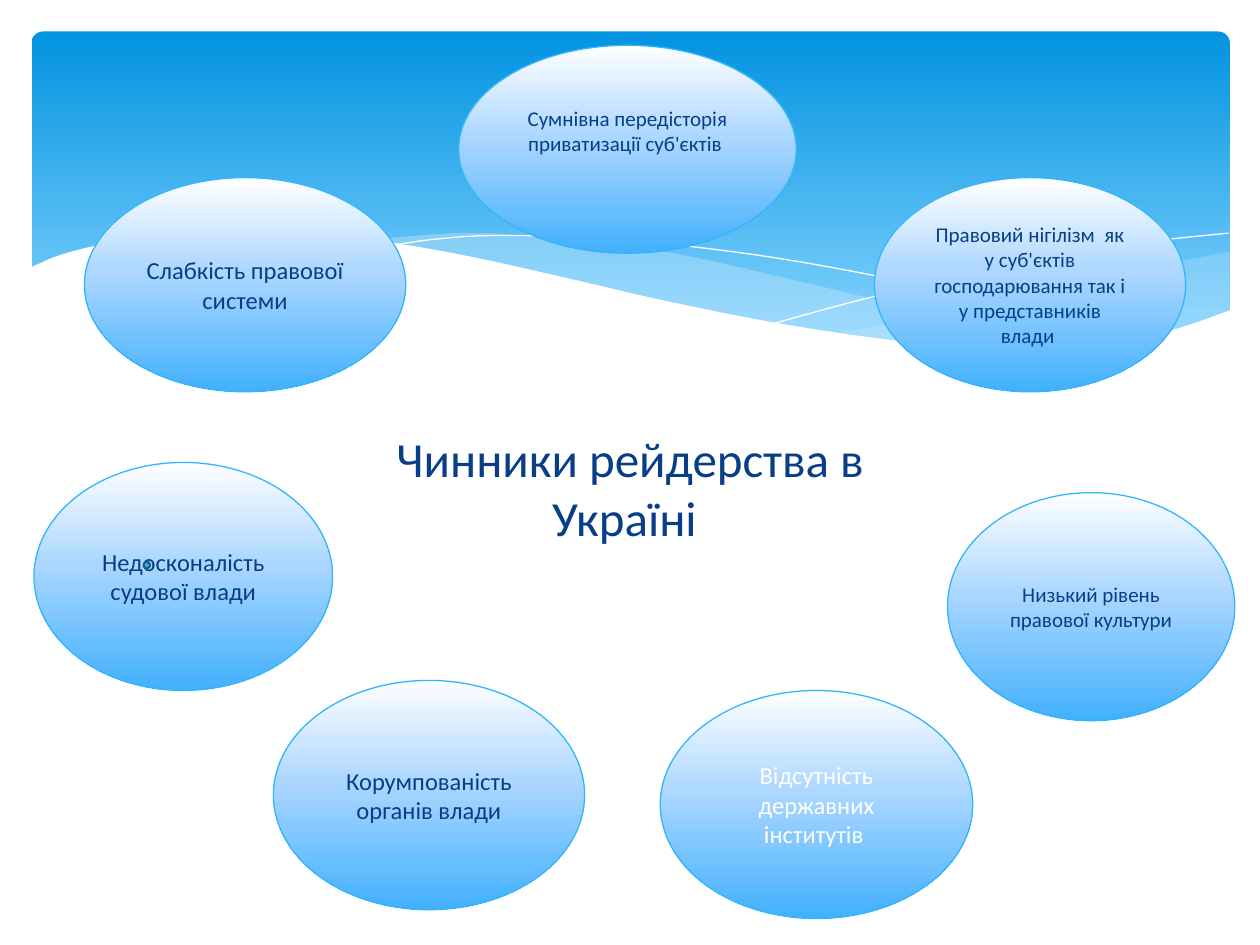
from dataclasses import dataclass
from lxml.etree import SubElement as Sub
from pptx import Presentation
from pptx.dml.color import RGBColor as Rgb
from pptx.enum.shapes import MSO_SHAPE as Kind
from pptx.enum.text import MSO_ANCHOR as Anchor, PP_ALIGN as Align
from pptx.oxml.ns import qn
from pptx.util import Inches, Pt


@dataclass(frozen=True)
class Theme:
    font: str = "Calibri"
    ink: str = "073E87"
    white: str = "FFFFFF"
    edge: str = "31B6FD"
    dark: str = "195F84"
    mist: str = "C6E7FC"
    sky: tuple = ((0, "0293E0"), (90, "83D3FE"))
    glow: tuple = ((0, "FFFFFF"), (44, "ACD7FF"), (100, "42B0FD"))
    head: int = 28
    big: int = 14
    small: int = 12


def cell(n):
    """Length of n grid cells; the slide is 100 columns by 75 rows."""
    return Inches(n / 10)


def smooth(keys, steps=6):
    """Points of a Catmull-Rom curve through the keys."""
    ends = [keys[0], *keys, keys[-1]]
    out = [keys[0]]
    for a, b, c, d in zip(ends, ends[1:], ends[2:], ends[3:]):
        for i in range(1, steps + 1):
            t = i / steps
            out.append(tuple(
                (2 * q + (r - p) * t + (2 * p - 5 * q + 4 * r - s) * t ** 2
                 + (3 * q - p - 3 * r + s) * t ** 3) / 2
                for p, q, r, s in zip(a, b, c, d)))
    return out


class Page:
    def __init__(self, deck, theme):
        self.theme = theme
        self.slide = deck.slides.add_slide(deck.slide_layouts[6])
        self.shapes = self.slide.shapes

    def paint(self, shape, fill=None, line=None, width=0.75, alpha=None):
        shape.shadow.inherit = False
        if fill:
            shape.fill.solid()
            shape.fill.fore_color.rgb = Rgb.from_string(fill)
            if alpha:
                tint = shape.fill._xPr.find(".//" + qn("a:srgbClr"))
                Sub(tint, qn("a:alpha"), val=str(alpha * 1000))
        else:
            shape.fill.background()
        if line:
            shape.line.color.rgb = Rgb.from_string(line)
            shape.line.width = Pt(width)
        else:
            shape.line.fill.background()

    def fade(self, shape, stops):
        """Downward gradient with any number of stops."""
        shape.fill.gradient()
        grad = shape.fill._xPr.find(qn("a:gradFill"))
        for part in list(grad):
            grad.remove(part)
        row = Sub(grad, qn("a:gsLst"))
        for at, tone in stops:
            stop = Sub(row, qn("a:gs"), pos=str(at * 1000))
            Sub(stop, qn("a:srgbClr"), val=tone)
        Sub(grad, qn("a:lin"), ang="5400000", scaled="0")

    def label(self, shape, text, size, tone):
        frame = shape.text_frame
        frame.word_wrap = True
        frame.vertical_anchor = Anchor.MIDDLE
        para = frame.paragraphs[0]
        para.alignment = Align.CENTER
        run = para.add_run()
        run.text = text
        run.font.name = self.theme.font
        run.font.size = Pt(size)
        run.font.color.rgb = Rgb.from_string(tone)

    def form(self, kind, box):
        return self.shapes.add_shape(kind, *map(cell, box))

    def panel(self, box, curve):
        shape = self.form(Kind.ROUNDED_RECTANGLE, box)
        shape.adjustments[0] = curve
        self.paint(shape)
        self.fade(shape, self.theme.sky)

    def wave(self, points, close=True, **style):
        spots = [(cell(x), cell(y)) for x, y in points]
        pen = self.shapes.build_freeform(*spots[0], scale=1.0)
        pen.add_line_segments(spots[1:], close=close)
        self.paint(pen.convert_to_shape(), **style)

    def title(self, box, text):
        shape = self.shapes.add_textbox(*map(cell, box))
        self.label(shape, text, self.theme.head, self.theme.ink)

    def dot(self, box):
        self.paint(self.form(Kind.OVAL, box), self.theme.edge, self.theme.dark, 1.25)

    def bubble(self, box, text, size, tone, lift=0):
        shape = self.form(Kind.OVAL, box)
        self.paint(shape, line=self.theme.edge)
        self.fade(shape, self.theme.glow)
        self.label(shape, text, size, tone)
        shape.text_frame.margin_bottom = cell(0.5 + lift)


def main():
    deck = Presentation()
    deck.slide_width, deck.slide_height = cell(100), cell(75)
    look = Theme()
    page = Page(deck, look)

    # Blue header
    page.panel((2.5, 2.5, 95.1, 27), 0.034)

    # Translucent bands: upper and lower edge of each
    right = (smooth([(97.6, 20), (92.1, 21), (86.1, 22.3), (75.3, 24.8), (66.1, 26.5)])
             + smooth([(66.1, 26.5), (71.9, 27.2), (78.1, 27.7), (83.5, 27.7),
                       (88.9, 27.2), (93.5, 26.2), (97.6, 24.7)]))
    mid = (smooth([(89.3, 27.3), (80.7, 26), (70.6, 24), (62.9, 22.2), (55.5, 20.5),
                   (48.9, 19.4), (42, 18.7), (36.1, 18.5), (28.6, 19.1)])
           + smooth([(28.6, 19.1), (36.2, 20.3), (44.9, 22.2), (56.6, 24.8), (65, 26.4),
                     (72.2, 27.4), (78.5, 27.8), (84.8, 27.7), (89.3, 27.3)]))
    page.wave(right, fill=look.mist, alpha=29)
    page.wave(mid, fill=look.mist, alpha=40)

    # Hairline curves
    for keys in (
        [(30.9, 19.5), (34.4, 19), (38.7, 18.7), (45, 18.8), (53.3, 19.4),
         (63.6, 20.8), (76, 23.3), (90.7, 27.2)],
        [(61.3, 25.7), (69.5, 23.5), (80.6, 21), (89.5, 19.4), (97.5, 18.5)],
    ):
        page.wave(smooth(keys), close=False, line=look.white, width=0)

    # White wave that cuts the header
    crest = smooth([(97.7, 24.6), (93, 26.2), (87.5, 27.3), (80.9, 27.7), (72.6, 27.2),
                    (62.6, 25.8), (52.9, 23.9), (44.7, 22), (36.5, 20.2), (29.2, 19),
                    (23, 18.5), (17.7, 18.4), (11.9, 18.7), (7.6, 19.5), (4.6, 20.3),
                    (2.3, 21.3)])
    page.wave(crest + [(2.3, 32.9), (97.7, 32.9)], fill=look.white)

    # Topic and its factors
    page.title((24.8, 32.8, 50.4, 11.8), "Чинники рейдерства в Україні ")
    big, small, ink = look.big, look.small, look.ink
    page.bubble((6.7, 14.1, 25.5, 17), "Слабкість правової системи", big, ink)
    page.bubble((2.7, 36.7, 23.7, 18.1), "Недосконалість судової влади", big, ink)
    page.dot((11.4, 44.6, 0.5, 0.5))
    page.bubble((21.7, 54, 24.7, 18.2), "Корумпованість органів влади", big, ink)
    page.bubble((52.4, 54.8, 24.8, 18.1), "Відсутність державних інститутів ", big, look.white)
    page.bubble((75.2, 39.1, 22.8, 18.1), "Низький рівень правової культури", small, ink)
    page.bubble((69.4, 14.1, 24.7, 17), "Правовий нігілізм  як у суб'єктів господарювання "
                "так і у представників влади ", small, ink)
    page.bubble((36.4, 3.6, 26.8, 16.5), "Сумнівна передісторія приватизації суб'єктів ",
                small, ink, lift=3)

    deck.save("out.pptx")


if __name__ == "__main__":
    main()
